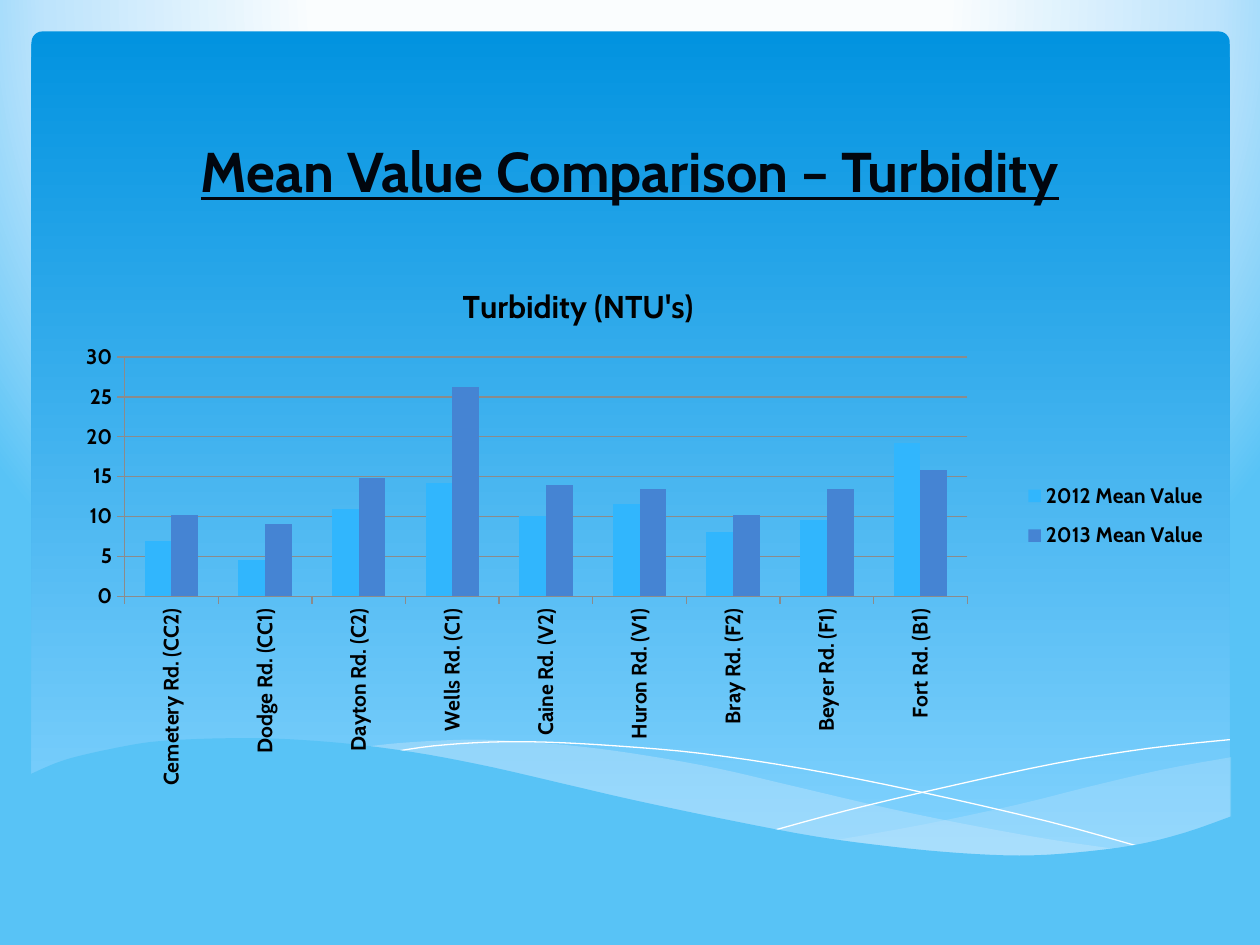
from lxml import etree
from pptx import Presentation
from pptx import util as u
from pptx.chart.data import CategoryChartData
from pptx.dml.color import RGBColor
from pptx.enum import chart as ch, shapes, text
from pptx.oxml import parse_xml
from pptx.oxml.ns import qn, nsdecls

COLS, ROWS = 100, 75
FONT = "Cabin"
INK = RGBColor(0x01, 0x06, 0x0E)
BLACK = RGBColor(0, 0, 0)
WHITE = RGBColor(0xFF, 0xFF, 0xFF)
DEEP = RGBColor(0x02, 0x93, 0xE0)
PALE = RGBColor(0x83, 0xD3, 0xFE)
FOAM = RGBColor(0xC6, 0xE7, 0xFC)
SKY = RGBColor(0x58, 0xC3, 0xF6)
MIST = RGBColor(0xBE, 0xE4, 0xFC)
GLOW = RGBColor(0xFA, 0xFD, 0xFE)
CYAN = RGBColor(0x31, 0xB6, 0xFD)
BLUE = RGBColor(0x45, 0x84, 0xD3)
GREY = RGBColor(0x8B, 0x8B, 0x8B)

SITES = ["Cemetery Rd. (CC2)", "Dodge Rd. (CC1)", "Dayton Rd. (C2)",
         "Wells Rd. (C1)", "Caine Rd. (V2)", "Huron Rd. (V1)",
         "Bray Rd. (F2)", "Beyer Rd. (F1)", "Fort Rd. (B1)"]
MEANS = [
    ("2012 Mean Value", CYAN, [6.9, 4.6, 10.9, 14.2, 10.1, 11.6, 8.1, 9.6, 19.2]),
    ("2013 Mean Value", BLUE, [10.2, 9.1, 14.9, 26.2, 13.9, 13.5, 10.2, 13.5, 15.8]),
]

RIGHT_TOP = [(97.7, 60.1), (92.2, 61.1), (86.2, 62.5), (80.6, 63.9),
             (73, 65.5), (66.2, 66.7)]
RIGHT_LOW = [(66.2, 66.7), (71.9, 67.4), (77, 67.9), (81.5, 68), (86.4, 67.7),
             (90.7, 67.1), (94.4, 66.1), (97.7, 64.9)]
MID_TOP = [(89.4, 67.5), (83.8, 66.7), (77.6, 65.6), (70.7, 64.2), (63, 62.4),
           (57, 61), (51.5, 60), (46.5, 59.3), (42, 58.9), (38, 58.7),
           (34.5, 58.8), (31.4, 59), (28.7, 59.3)]
MID_LOW = [(28.7, 59.3), (34.3, 60.1), (40.5, 61.3), (45, 62.4), (53, 64.2),
           (60.2, 65.7), (66.6, 66.8), (72.3, 67.6), (77.4, 67.9),
           (81.9, 68), (85.9, 67.9), (89.4, 67.5)]
FALL = [(31, 59.7), (34.4, 59.2), (38.8, 58.9), (43.3, 58.9), (48.9, 59.2),
        (55.7, 59.8), (63.7, 61), (72.8, 62.8), (83.2, 65.2), (90.8, 67.3)]
RISE = [(61.4, 65.9), (67.3, 64.3), (74.9, 62.5), (83.7, 60.6),
        (91.1, 59.4), (97.6, 58.7)]
CREST = [(97.7, 64.8), (94, 66.1), (89.9, 67.1), (85, 67.7), (80.9, 67.9),
         (76.1, 67.7), (70.8, 67.2), (64.8, 66.4), (57.9, 65.1), (50.3, 63.5),
         (44.7, 62.2), (39.1, 60.9), (34, 59.9), (29.2, 59.2), (25, 58.8),
         (21.1, 58.6), (17.7, 58.6), (14.6, 58.7), (11.9, 58.9), (9.5, 59.3),
         (6.7, 59.9), (4.6, 60.5), (2.3, 61.5)]


def smooth(knots, steps=4):
    ends = [knots[0], *knots, knots[-1]]
    out = []
    for a, b, c, d in zip(ends, ends[1:], ends[2:], ends[3:]):
        for t in (i / steps for i in range(steps)):
            out.append(tuple(
                q + t * (r - p) / 2 + t * t * (p - 2.5 * q + 2 * r - s / 2)
                + t ** 3 * (3 * (q - r) + s - p) / 2
                for p, q, r, s in zip(a, b, c, d)))
    return out + [knots[-1]]


def style(font, size, color=BLACK, bold=True, line=False):
    font.name, font.size, font.bold = FONT, u.Pt(size), bold
    font.underline = line
    font.color.rgb = color


def write(frame, words, align=text.PP_ALIGN.CENTER, **form):
    para = frame.paragraphs[0]
    para.alignment = align
    run = para.add_run()
    run.text = words
    style(run.font, **form)


def place(part, x, y, w=None, h=None):
    old = part.find(qn("c:layout"))
    if old is not None:
        part.remove(old)
    modes = [("xMode", "edge"), ("yMode", "edge"), ("x", x), ("y", y)]
    if w:
        modes += [("w", w), ("h", h)]
    if part.tag == qn("c:plotArea"):
        modes.insert(0, ("layoutTarget", "inner"))
    body = "".join(f'<c:{k} val="{v}"/>' for k, v in modes)
    node = parse_xml(f'<c:layout {nsdecls("c")}><c:manualLayout>{body}'
                     '</c:manualLayout></c:layout>')
    lead = {"c:title": "c:tx", "c:legend": "c:legendPos"}
    prior = [part.find(qn(v)) for k, v in lead.items() if part.tag == qn(k)]
    if prior:
        prior[0].addnext(node)
    else:
        part.insert(0, node)


class Deck:
    def __init__(self):
        self.prs = Presentation()
        self.prs.slide_width, self.prs.slide_height = u.Inches(10), u.Inches(7.5)
        self.col = self.prs.slide_width / COLS
        self.row = self.prs.slide_height / ROWS
        self.slide = self.prs.slides.add_slide(self.prs.slide_layouts[5])

    def box(self, x, y, w, h):
        return (round(x * self.col), round(y * self.row),
                round(w * self.col), round(h * self.row))

    def back(self, stops):
        self.slide.background.fill.solid()
        marks = "".join(f'<a:gs pos="{p * 1000}"><a:srgbClr val="{c}"/></a:gs>'
                        for p, c in stops)
        fill = parse_xml(
            f'<a:gradFill {nsdecls("a")} rotWithShape="1"><a:gsLst>{marks}</a:gsLst>'
            '<a:path path="circle"><a:fillToRect l="20000" t="-40000" '
            'r="20000" b="140000"/></a:path></a:gradFill>')
        base = self.slide.element.find(".//" + qn("p:bgPr"))
        base.replace(base[0], fill)

    def panel(self, area, top, low):
        shape = self.slide.shapes.add_shape(
            shapes.MSO_SHAPE.ROUNDED_RECTANGLE, *self.box(*area))
        shape.adjustments[0] = 0.013
        shape.shadow.inherit = False
        shape.line.fill.background()
        shape.fill.gradient()
        shape.fill.gradient_angle = 270
        for stop, color in zip(shape.fill.gradient_stops, (top, low)):
            stop.color.rgb = color

    def wave(self, points, fill=None, alpha=100):
        dots = [(round(x * self.col), round(y * self.row)) for x, y in points]
        pen = self.slide.shapes.build_freeform(*dots[0])
        pen.add_line_segments(dots[1:], close=fill is not None)
        shape = pen.convert_to_shape()
        shape.shadow.inherit = False
        if fill is None:
            shape.fill.background()
            shape.line.color.rgb = WHITE
            shape.line.width = u.Pt(0)
            return
        shape.line.fill.background()
        shape.fill.solid()
        shape.fill.fore_color.rgb = fill
        if alpha < 100:
            tint = shape.element.spPr.find(".//" + qn("a:srgbClr"))
            etree.SubElement(tint, qn("a:alpha")).set("val", str(alpha * 1000))

    def title(self, words, area):
        head = self.slide.shapes.title
        head.left, head.top, head.width, head.height = self.box(*area)
        head.element.getparent().append(head.element)
        head.text_frame.vertical_anchor = text.MSO_ANCHOR.BOTTOM
        write(head.text_frame, words, size=32, color=INK, line=True)

    def chart(self, name, cats, rows, area):
        data = CategoryChartData()
        data.categories = cats
        for label, _, vals in rows:
            data.add_series(label, vals)
        chart = self.slide.shapes.add_chart(
            ch.XL_CHART_TYPE.COLUMN_CLUSTERED, *self.box(*area), data).chart
        style(chart.font, 10, bold=False)
        chart.has_title = True
        write(chart.chart_title.text_frame, name, size=18)
        chart.has_legend = True
        chart.legend.position = ch.XL_LEGEND_POSITION.RIGHT
        chart.legend.include_in_layout = False
        style(chart.legend.font, 12)
        plot = chart.plots[0]
        plot.gap_width, plot.overlap, plot.vary_by_categories = 150, 0, False
        for series, (_, color, _) in zip(plot.series, rows):
            series.format.fill.solid()
            series.format.fill.fore_color.rgb = color
        for axis in (chart.category_axis, chart.value_axis):
            style(axis.tick_labels.font, 12)
            axis.major_tick_mark = ch.XL_TICK_MARK.OUTSIDE
            axis.format.line.color.rgb = GREY
        turn = chart.category_axis._element.find(qn("c:txPr")).find(qn("a:bodyPr"))
        turn.set("rot", "-5400000")
        turn.set("vert", "horz")
        scale = chart.value_axis
        scale.minimum_scale, scale.maximum_scale, scale.major_unit = 0, 30, 5
        scale.major_gridlines.format.line.color.rgb = GREY
        place(chart.chart_title._element, 0.35, 0.06)
        place(chart.legend._element, 0.82, 0.4, 0.17, 0.17)
        place(plot._element.getparent(), 0.07, 0.2, 0.71, 0.43)


def main():
    deck = Deck()
    deck.back([(40, GLOW), (74, MIST), (100, SKY)])
    deck.panel((2.5, 2.5, 95.1, 66), DEEP, PALE)
    deck.wave(smooth(RIGHT_TOP) + smooth(RIGHT_LOW), FOAM, 29)
    deck.wave(smooth(MID_TOP) + smooth(MID_LOW), FOAM, 40)
    deck.wave(smooth(FALL))
    deck.wave(smooth(RISE))
    deck.wave(smooth(CREST) + [(2.3, 73.1), (97.7, 73.1)], SKY)
    deck.title("Mean Value Comparison – Turbidity", (7.5, 9.2, 85, 7.5))
    deck.chart("Turbidity (NTU's)", SITES, MEANS, (3.3, 19.5, 94.2, 44.2))
    deck.prs.save("out.pptx")


if __name__ == "__main__":
    main()
